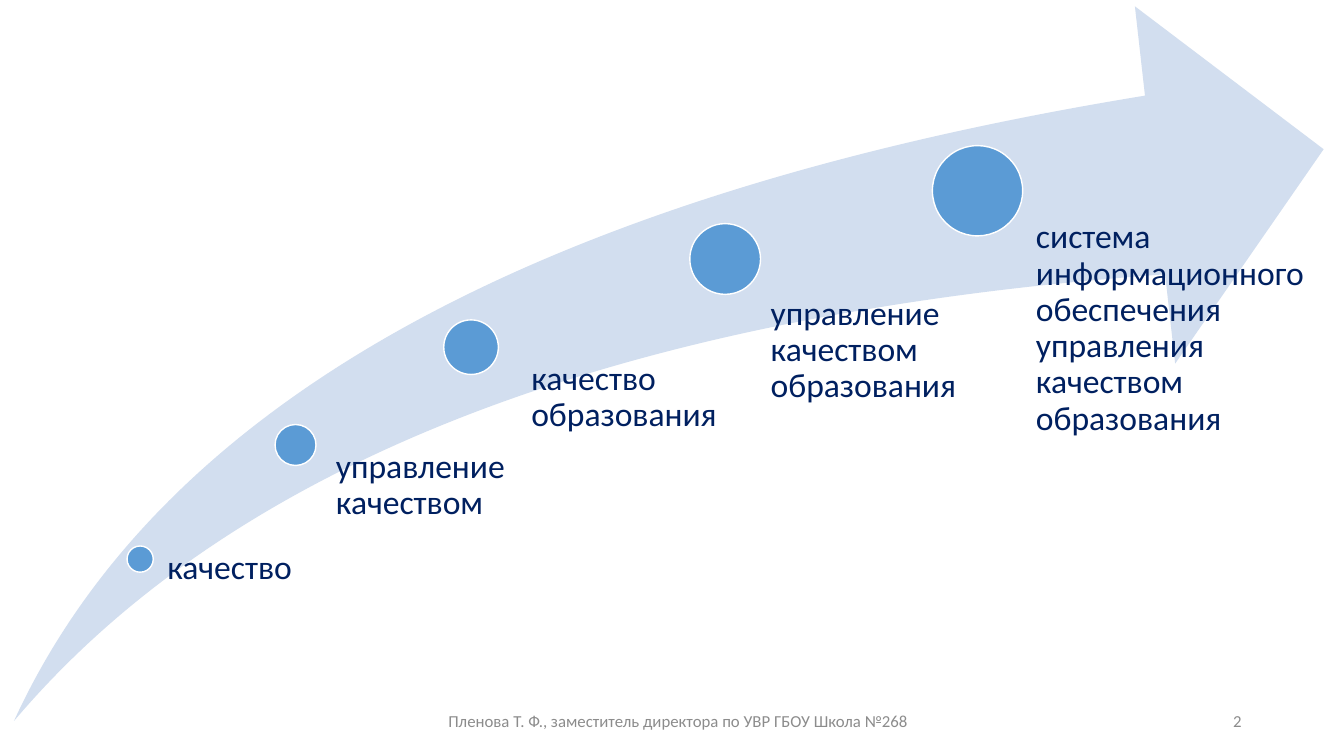
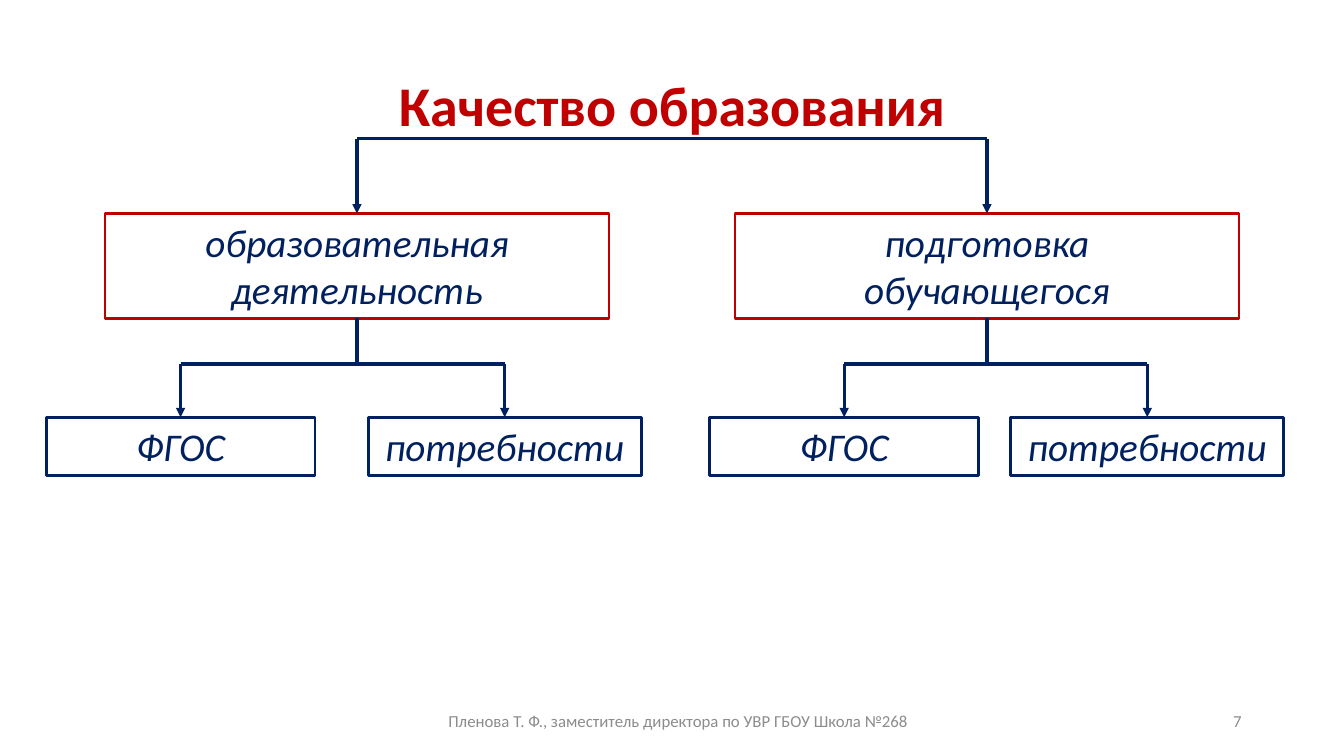
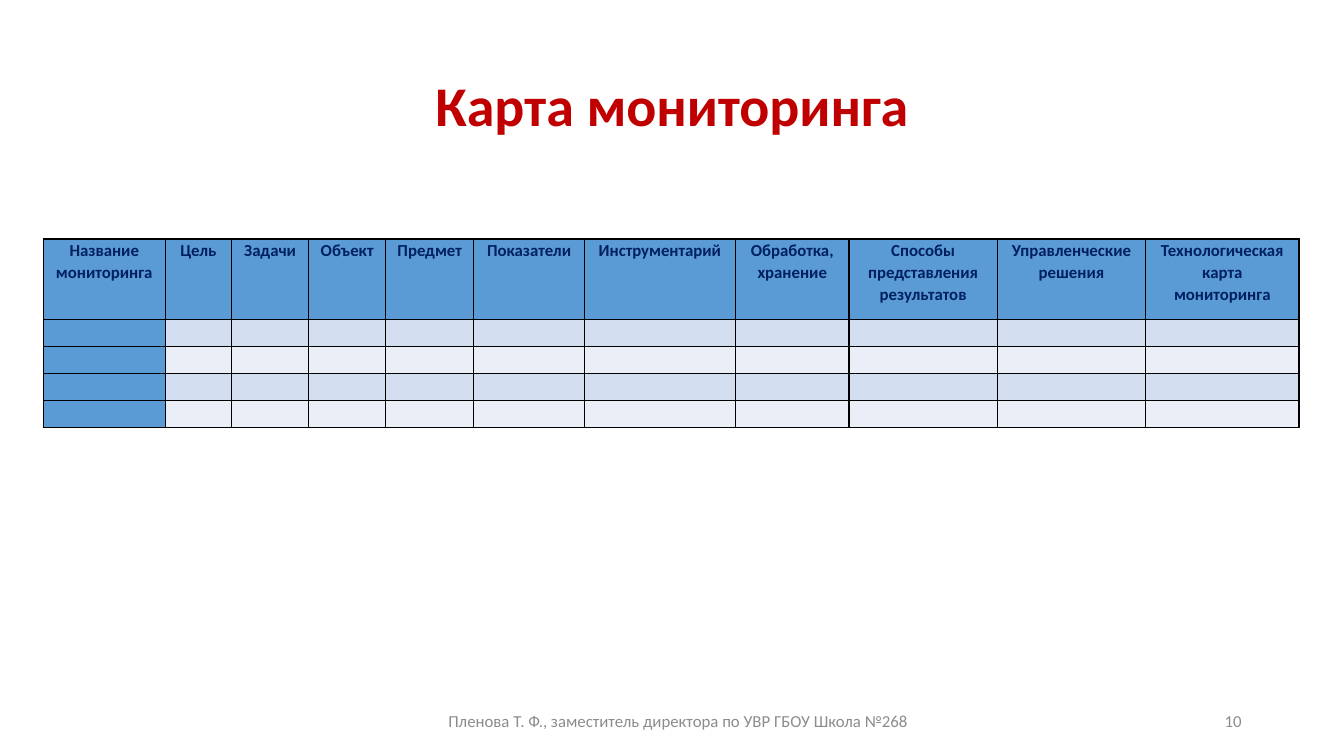
from lxml.etree import SubElement
from pptx import Presentation
from pptx.dml.color import RGBColor
from pptx.enum.shapes import MSO_CONNECTOR, MSO_SHAPE
from pptx.enum.text import MSO_ANCHOR, MSO_AUTO_SIZE, PP_ALIGN
from pptx.oxml.ns import qn
from pptx.util import Pt

NAVY = RGBColor(0x00, 0x20, 0x60)
RED = RGBColor(0xC0, 0x00, 0x00)
BLUE = RGBColor(0x5B, 0x9B, 0xD5)
LIGHT_BLUE = RGBColor(0xD2, 0xDE, 0xEF)
PALE_BLUE = RGBColor(0xEA, 0xEF, 0xF7)
GRAY = RGBColor(0x8C, 0x8C, 0x8C)
WHITE = RGBColor(0xFF, 0xFF, 0xFF)
FONT = "Calibri"
FOOTER = "Пленова Т. Ф., заместитель директора по УВР ГБОУ Школа №268"
TOP, BOTTOM = 0, 2  # connection sites of a rectangle


def write(frame, text, size, color, align=PP_ALIGN.LEFT, spacing=1.0, bold=False, italic=False):
    """Fill a text frame and give every paragraph and run the same format."""
    frame.word_wrap = True
    frame.text = text
    for paragraph in frame.paragraphs:
        paragraph.alignment = align
        paragraph.line_spacing = spacing
        for span in paragraph.runs:
            span.font.name = FONT
            span.font.size = Pt(size)
            span.font.color.rgb = color
            span.font.bold = bold
            span.font.italic = italic


def add_line(page, x1, y1, x2, y2, arrow=False):
    line = page.shapes.add_connector(MSO_CONNECTOR.STRAIGHT, Pt(x1), Pt(y1), Pt(x2), Pt(y2))
    line.line.color.rgb = NAVY
    line.line.width = Pt(2.25)
    if arrow:
        SubElement(line.line._get_or_add_ln(), qn("a:tailEnd"), type="triangle")
    SubElement(line._element.spPr, qn("a:effectLst"))
    return line


deck = Presentation()
deck.slide_width, deck.slide_height = Pt(960), Pt(540)
title_only, blank = deck.slide_layouts[5], deck.slide_layouts[6]
growth_page = deck.slides.add_slide(blank)
scheme_page = deck.slides.add_slide(title_only)
map_page = deck.slides.add_slide(title_only)

# Titles, footers and page numbers
for page, heading in ((scheme_page, "Качество образования"), (map_page, "Карта мониторинга")):
    title = page.shapes.title
    title.left, title.top, title.width, title.height = Pt(66), Pt(47.5), Pt(828), Pt(104.4)
    write(title.text_frame, heading, 40, RED, PP_ALIGN.CENTER, 0.9, bold=True)
    title.text_frame.auto_size = MSO_AUTO_SIZE.NONE
    title.text_frame.vertical_anchor = MSO_ANCHOR.MIDDLE
    title.text_frame.margin_bottom = Pt(47.6)

for page, number in ((growth_page, "2"), (scheme_page, "7"), (map_page, "10")):
    for left, width, text, align in (
        (678, 216, number, PP_ALIGN.RIGHT),
        (232, 505, FOOTER, PP_ALIGN.CENTER),
    ):
        box = page.shapes.add_textbox(Pt(left), Pt(500.5), Pt(width), Pt(28.75))
        write(box.text_frame, text, 12, GRAY, align)
        box.text_frame.vertical_anchor = MSO_ANCHOR.MIDDLE

# Growth arrow with its steps
swoosh = growth_page.shapes.add_shape(
    MSO_SHAPE.SWOOSH_ARROW, Pt(10), Pt(4.5), Pt(935.5), Pt(510.5))
swoosh.adjustments[0] = swoosh.adjustments[1] = 0.25
swoosh.shadow.inherit = False
swoosh.fill.solid()
swoosh.fill.fore_color.rgb = LIGHT_BLUE
swoosh.line.fill.background()

# Dot left, top, diameter; label left, top, width, height, indent; wording
steps = (
    (90.75, 390, 18.75, 109.5, 393, 107, 122, 10, "качество"),
    (196.5, 303.25, 29.25, 224, 321, 166, 174, 16, "управление качеством"),
    (317, 228.5, 39, 358.5, 258, 158, 227, 21, "качество образования"),
    (492.75, 159.75, 50.5, 523.5, 211.5, 163.5, 264, 27, "управление качеством образования"),
    (666, 104, 64.5, 706, 157, 238.5, 358, 34,
     "система информационного обеспечения управления качеством образования"),
)
for x, y, diameter, left, top, width, height, indent, label in steps:
    dot = growth_page.shapes.add_shape(MSO_SHAPE.OVAL, Pt(x), Pt(y), Pt(diameter), Pt(diameter))
    dot.shadow.inherit = False
    dot.fill.solid()
    dot.fill.fore_color.rgb = BLUE
    dot.line.color.rgb = WHITE
    dot.line.width = Pt(1)
    box = growth_page.shapes.add_textbox(Pt(left), Pt(top), Pt(width), Pt(height))
    frame = box.text_frame
    write(frame, label, 24, NAVY, spacing=0.9)
    frame.margin_left = Pt(indent)
    frame.margin_top = frame.margin_right = frame.margin_bottom = 0

# Scheme: two branches, each with two leaves
FORK_TOP, LEAF_FORK = 99, 260
BRANCH_TOP, BRANCH_WIDTH, BRANCH_HEIGHT = 152.5, 360, 75
LEAF_TOP, LEAF_HEIGHT = 298, 41.5
branches = (
    (75, "образовательная деятельность", (33, 263)),
    (525, "подготовка\nобучающегося", (507, 722)),
)
leaf_kinds = ((192, "ФГОС"), (195, "потребности"))

branch_centers = [left + BRANCH_WIDTH / 2 for left, _, _ in branches]
add_line(scheme_page, branch_centers[0], FORK_TOP, branch_centers[1], FORK_TOP)
for (branch_left, branch_text, leaf_lefts), center in zip(branches, branch_centers):
    rectangles = [(branch_left, BRANCH_TOP, BRANCH_WIDTH, BRANCH_HEIGHT, branch_text, RED)]
    for left, (width, text) in zip(leaf_lefts, leaf_kinds):
        rectangles.append((left, LEAF_TOP, width, LEAF_HEIGHT, text, NAVY))
    boxes = []
    for left, top, width, height, text, color in rectangles:
        box = scheme_page.shapes.add_shape(
            MSO_SHAPE.RECTANGLE, Pt(left), Pt(top), Pt(width), Pt(height))
        box.shadow.inherit = False
        box.fill.background()
        box.line.color.rgb = color
        box.line.width = Pt(2)
        write(box.text_frame, text, 28, NAVY, PP_ALIGN.CENTER, italic=True)
        box.text_frame.vertical_anchor = MSO_ANCHOR.TOP
        box.text_frame.auto_size = MSO_AUTO_SIZE.SHAPE_TO_FIT_TEXT
        boxes.append(box)

    branch, *leaves = boxes
    add_line(scheme_page, center, FORK_TOP, center, BRANCH_TOP, arrow=True).end_connect(branch, TOP)
    stem = add_line(scheme_page, center, BRANCH_TOP + BRANCH_HEIGHT, center, LEAF_FORK)
    stem.begin_connect(branch, BOTTOM)
    leaf_centers = [left + width / 2 for left, (width, _) in zip(leaf_lefts, leaf_kinds)]
    add_line(scheme_page, leaf_centers[0], LEAF_FORK, leaf_centers[1], LEAF_FORK)
    for leaf, x in zip(leaves, leaf_centers):
        add_line(scheme_page, x, LEAF_FORK, x, LEAF_TOP, arrow=True).end_connect(leaf, TOP)

# Monitoring map
columns = (
    ("Название мониторинга", 87), ("Цель", 47.5), ("Задачи", 55), ("Объект", 55),
    ("Предмет", 63), ("Показатели", 79), ("Инструментарий", 108), ("Обработка, хранение", 81),
    ("Способы представления результатов", 106), ("Управленческие решения", 106),
    ("Технологическая карта мониторинга", 109.5),
)
row_heights = (57.5, 19.25, 19.25, 19.25, 19.25)
table = map_page.shapes.add_table(
    len(row_heights), len(columns), Pt(31), Pt(170.75),
    Pt(sum(width for _, width in columns)), Pt(sum(row_heights))).table
for column, (_, width) in zip(table.columns, columns):
    column.width = Pt(width)
for row_index, height in enumerate(row_heights):
    table.rows[row_index].height = Pt(height)
    for column_index, (heading, _) in enumerate(columns):
        cell = table.cell(row_index, column_index)
        cell.margin_left = cell.margin_right = Pt(5.4)
        cell.margin_top = cell.margin_bottom = 0
        text = heading if row_index == 0 else ""
        write(cell.text_frame, text, 12, NAVY, PP_ALIGN.CENTER, 1.07, bold=True)
        if not text:
            SubElement(cell.text_frame.paragraphs[0]._p, qn("a:endParaRPr"), sz="1200")
        properties = cell._tc.get_or_add_tcPr()
        for side in ("a:lnL", "a:lnR", "a:lnT", "a:lnB"):
            border = SubElement(properties, qn(side), w=str(Pt(1)))
            SubElement(SubElement(border, qn("a:solidFill")), qn("a:srgbClr"), val="000000")
        cell.fill.solid()
        if row_index == 0 or column_index == 0:
            cell.fill.fore_color.rgb = BLUE
        else:
            cell.fill.fore_color.rgb = LIGHT_BLUE if row_index % 2 else PALE_BLUE

deck.save("out.pptx")
